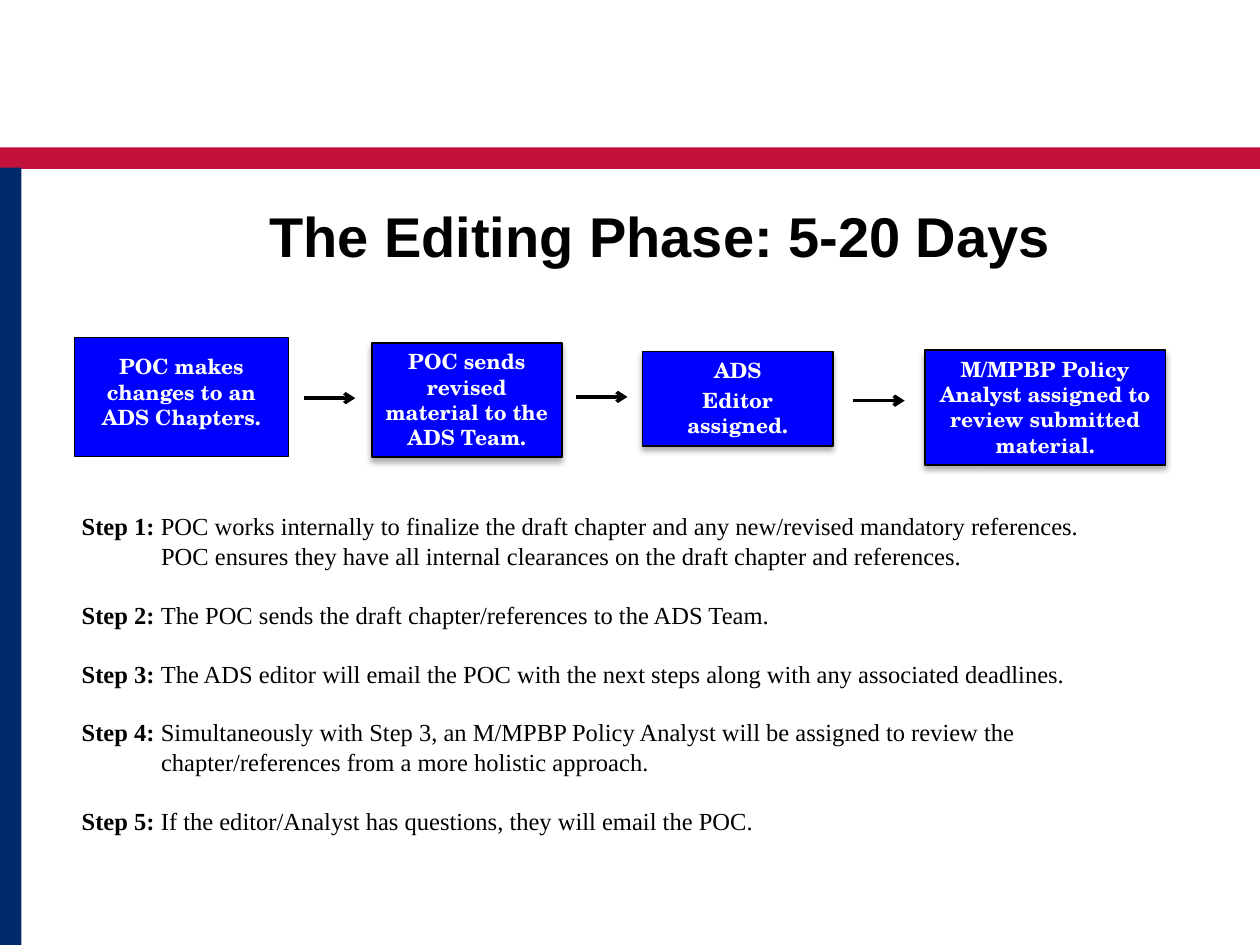
from dataclasses import dataclass

from lxml.etree import SubElement
from pptx import Presentation
from pptx.dml.color import RGBColor
from pptx.enum.shapes import MSO_CONNECTOR, MSO_SHAPE
from pptx.enum.text import MSO_ANCHOR, MSO_AUTO_SIZE, PP_ALIGN
from pptx.oxml.ns import qn
from pptx.slide import Slide
from pptx.text.text import TextFrame
from pptx.util import Inches, Pt


@dataclass(frozen=True)
class Theme:
    red: RGBColor = RGBColor(0xC2, 0x11, 0x3A)
    navy: RGBColor = RGBColor(0x00, 0x2A, 0x6C)
    blue: RGBColor = RGBColor(0x00, 0x00, 0xFF)
    black: RGBColor = RGBColor(0x00, 0x00, 0x00)
    white: RGBColor = RGBColor(0xFF, 0xFF, 0xFF)
    title_size: Pt = Pt(32)
    stage_size: Pt = Pt(12)
    step_size: Pt = Pt(14)
    step_line: Pt = Pt(16.8)


@dataclass(frozen=True)
class Stage:
    left: float
    top: float
    width: float
    height: float
    lines: tuple[str, ...]
    border: float = 1
    top_inset: float = 0.05
    raised: bool = True


@dataclass(frozen=True)
class Arrow:
    left: float
    y: float


@dataclass(frozen=True)
class Step:
    label: str
    text: str


THEME = Theme()
ARROW_LENGTH = 0.41
STEP_INDENT = Inches(0.63)

TITLE_FONT = {"name": "Arial", "size": THEME.title_size, "bold": True}
STAGE_FONT = {"name": "TeX Gyre Schola", "size": THEME.stage_size, "bold": True}
STEP_FONT = {"name": "Times New Roman", "size": THEME.step_size}

STAGES = (
    Stage(0.59, 2.68, 1.7, 0.94, ("POC makes changes to an ADS Chapters.",),
          border=0.25, top_inset=0.13, raised=False),
    Stage(2.95, 2.72, 1.51, 0.91, ("POC sends revised material to the ADS Team.",)),
    Stage(5.1, 2.79, 1.51, 0.75, ("ADS", "Editor assigned.")),
    Stage(7.34, 2.78, 1.91, 0.91,
          ("M/MPBP Policy Analyst assigned to review submitted material.",)),
)
ARROWS = (Arrow(2.41, 3.16), Arrow(4.57, 3.15), Arrow(6.77, 3.18))
# A vertical tab is a line break inside the step
STEPS = (
    Step("Step 1: ", "POC works internally to finalize the draft chapter and any "
         "new/revised mandatory references.\vPOC ensures they have all internal "
         "clearances on the draft chapter and references."),
    Step("Step 2: ", "The POC sends the draft chapter/references to the ADS Team."),
    Step("Step 3: ", "The ADS editor will email the POC with the next steps along "
         "with any associated deadlines."),
    Step("Step 4: ", "Simultaneously with Step 3, an M/MPBP Policy Analyst will be "
         "assigned to review the\vchapter/references from a more holistic approach."),
    Step("Step 5: ", "If the editor/Analyst has questions, they will email the POC."),
)


def apply_format(target: object, values: dict) -> None:
    for attribute, value in values.items():
        setattr(target, attribute, value)


def set_font(font: object, values: dict, color: RGBColor) -> None:
    apply_format(font, values)
    font.color.rgb = color


def set_frame(frame: TextFrame, top_inset: float = 0.05) -> None:
    apply_format(frame, {
        "word_wrap": True,
        "auto_size": MSO_AUTO_SIZE.NONE,
        "vertical_anchor": MSO_ANCHOR.TOP,
        "margin_top": Inches(top_inset),
    })


def add_block(slide: Slide, left: float, top: float, width: float,
              height: float, fill: RGBColor):
    block = slide.shapes.add_shape(MSO_SHAPE.RECTANGLE, Inches(left), Inches(top),
                                   Inches(width), Inches(height))
    block.shadow.inherit = False
    block.fill.solid()
    block.fill.fore_color.rgb = fill
    block.line.fill.background()
    return block


def add_drop_shadow(block) -> None:
    effects = block._element.spPr.find(qn("a:effectLst"))
    shadow = SubElement(effects, qn("a:outerShdw"), blurRad=str(Pt(3.5)),
                        dist=str(Pt(2.2)), dir="5400000", rotWithShape="0")
    color = SubElement(shadow, qn("a:srgbClr"), val=str(THEME.black))
    SubElement(color, qn("a:alpha"), val="32000")


def add_stage(slide: Slide, stage: Stage) -> None:
    box = add_block(slide, stage.left, stage.top, stage.width, stage.height, THEME.blue)
    box.line.color.rgb = THEME.black
    box.line.width = Pt(stage.border)
    if stage.raised:
        add_drop_shadow(box)
    frame = box.text_frame
    set_frame(frame, stage.top_inset)
    frame.text = "\n".join(stage.lines)
    for index, paragraph in enumerate(frame.paragraphs):
        paragraph.alignment = PP_ALIGN.CENTER
        if index:
            paragraph.space_before = Pt(2.4)
        set_font(paragraph.font, STAGE_FONT, THEME.white)


def add_arrow(slide: Slide, arrow: Arrow) -> None:
    connector = slide.shapes.add_connector(
        MSO_CONNECTOR.STRAIGHT, Inches(arrow.left), Inches(arrow.y),
        Inches(arrow.left + ARROW_LENGTH), Inches(arrow.y))
    connector.line.color.rgb = THEME.black
    connector.line.width = Pt(2)
    properties = connector._element.spPr
    SubElement(properties.find(qn("a:ln")), qn("a:tailEnd"), type="arrow")
    SubElement(properties, qn("a:effectLst"))


def add_steps(slide: Slide, steps: tuple[Step, ...]) -> None:
    frame = slide.shapes.add_textbox(Inches(0.55), Inches(4.01),
                                     Inches(8.91), Inches(2.69)).text_frame
    set_frame(frame)
    for index, step in enumerate(steps):
        paragraph = frame.add_paragraph() if index else frame.paragraphs[0]
        properties = paragraph._p.get_or_add_pPr()
        properties.set("marL", str(STEP_INDENT))
        properties.set("indent", str(-STEP_INDENT))
        paragraph.line_spacing = THEME.step_line
        if index:
            paragraph.space_before = THEME.step_line
        label = paragraph.add_run()
        label.text = step.label
        set_font(label.font, STEP_FONT | {"bold": True}, THEME.black)
        for number, line in enumerate(step.text.split("\v")):
            if number:
                paragraph.add_line_break()
            detail = paragraph.add_run()
            detail.text = line
            set_font(detail.font, STEP_FONT | {"bold": False}, THEME.black)


def add_title(slide: Slide, text: str) -> None:
    title = slide.shapes.title
    apply_format(title, {"left": Inches(1.03), "top": Inches(1.55),
                         "width": Inches(8.42), "height": Inches(0.7)})
    set_frame(title.text_frame)
    title.text_frame.text = text
    heading = title.text_frame.paragraphs[0]
    heading.alignment = PP_ALIGN.CENTER
    set_font(heading.font, TITLE_FONT, THEME.black)


def main() -> None:
    deck = Presentation()
    deck.slide_width, deck.slide_height = Inches(10), Inches(7.5)
    slide = deck.slides.add_slide(deck.slide_layouts[5])

    # Page bands
    add_block(slide, 0, 1.17, 10, 0.17, THEME.red)
    add_block(slide, 0, 1.33, 0.17, 6.17, THEME.navy)

    add_title(slide, "The Editing Phase: 5-20 Days")

    # Process flow
    for stage in STAGES:
        add_stage(slide, stage)
    for arrow in ARROWS:
        add_arrow(slide, arrow)

    # Step descriptions
    add_steps(slide, STEPS)
    deck.save("out.pptx")


if __name__ == "__main__":
    main()
